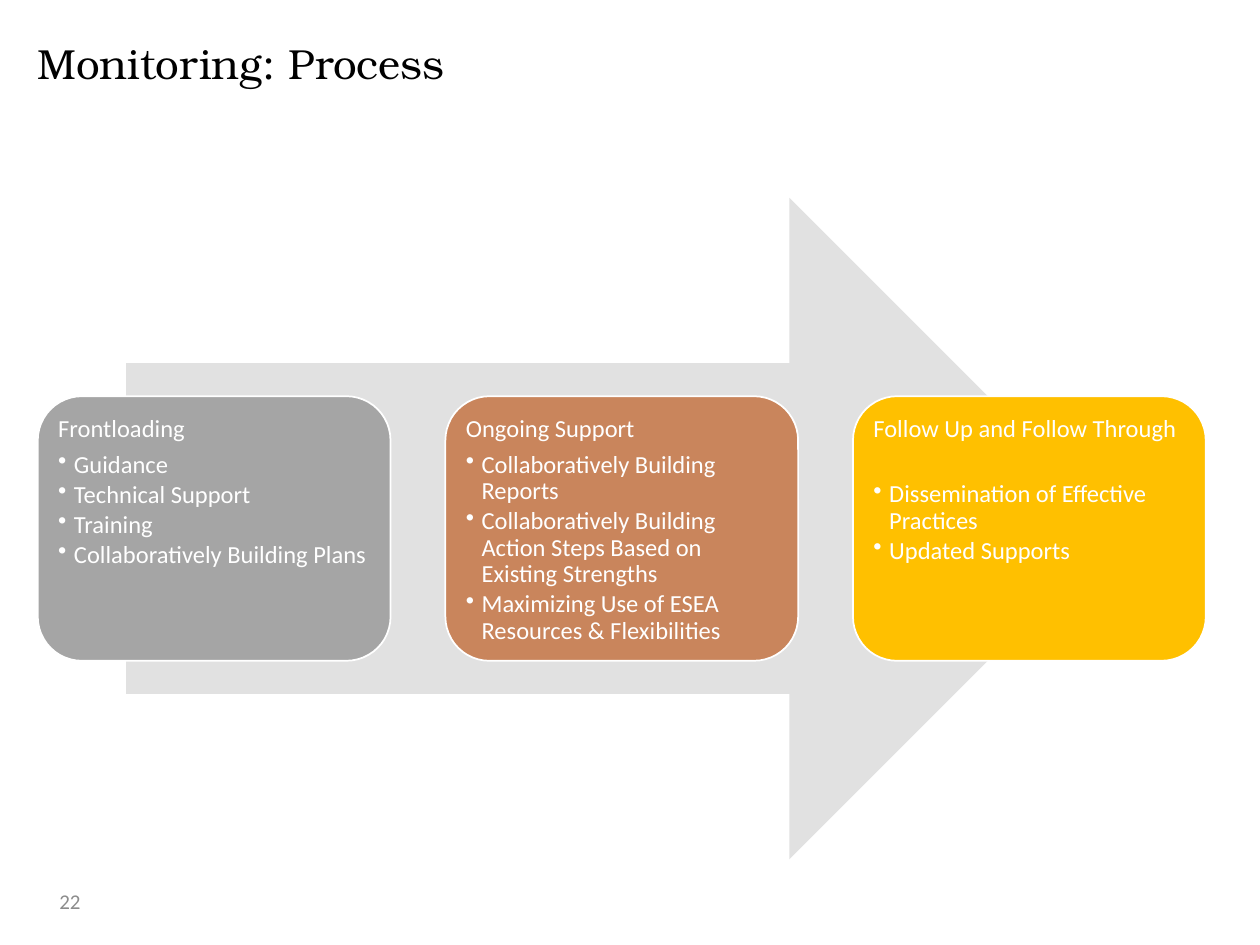
from lxml import etree
from pptx import Presentation
from pptx.dml.color import RGBColor
from pptx.enum.shapes import MSO_SHAPE
from pptx.enum.text import MSO_ANCHOR, PP_ALIGN
from pptx.oxml.ns import qn
from pptx.util import Inches, Pt

ARROW, CARD = MSO_SHAPE.RIGHT_ARROW, MSO_SHAPE.ROUNDED_RECTANGLE
LEFT, CENTER = PP_ALIGN.LEFT, PP_ALIGN.CENTER
TOP, MIDDLE = MSO_ANCHOR.TOP, MSO_ANCHOR.MIDDLE

TITLE = "Monitoring: Process"
PAGE = "22"
STAGES = [
    ("Frontloading", "A5A5A5", 5,
     ["Guidance", "Technical Support", "Training", "Collaboratively Building Plans"]),
    ("Ongoing Support", "C9855C", 5,
     ["Collaboratively Building Reports",
      "Collaboratively Building Action Steps Based on Existing Strengths",
      "Maximizing Use of ESEA Resources & Flexibilities"]),
    ("Follow Up and Follow Through", "FFC000", 22,
     ["Dissemination of Effective Practices", "Updated Supports"]),
]

WIDTH, HEIGHT = 10, 7.5
MARGIN = 0.3
CARD_W, CARD_H, PITCH = 2.8, 2.1, 3.235
ARROW_LEFT, ARROW_TOP, ARROW_W, ARROW_H = 1, 1.57, 7.89, 5.25
CARD_TOP = ARROW_TOP + (ARROW_H - CARD_H) / 2


def rgb(value):
    return RGBColor.from_string(value)


def add_block(kind, left, top, width, height, fill, line=None):
    s = slide.shapes.add_shape(kind, *map(Inches, (left, top, width, height)))
    s.shadow.inherit = False
    s.fill.solid()
    s.fill.fore_color.rgb = rgb(fill)
    if line:
        s.line.color.rgb = rgb(line)
        s.line.width = Pt(1)
    else:
        s.line.fill.background()
    return s


def set_frame(s, inset_x, inset_y, anchor=TOP):
    tf = s.text_frame
    tf.word_wrap = True
    tf.margin_left = tf.margin_right = Inches(inset_x)
    tf.margin_top = tf.margin_bottom = Inches(inset_y)
    tf.vertical_anchor = anchor
    return tf


def write(p, text, size=14, font="Calibri", color="FFFFFF", align=LEFT,
          spacing=1.0, after=0, bullet=False):
    if bullet:
        pPr = p._p.get_or_add_pPr()
        pPr.set("marL", str(Inches(0.125)))
        pPr.set("indent", str(-Inches(0.125)))
        etree.SubElement(pPr, qn("a:buChar"), char="•")
    p.alignment = align
    p.line_spacing = spacing
    p.space_after = Pt(after)
    r = p.add_run()
    r.text = text
    r.font.size = Pt(size)
    r.font.name = font
    r.font.color.rgb = rgb(color)


def add_text(text, left, top, width, height, inset_x=0, inset_y=0, anchor=TOP, **fmt):
    s = slide.shapes.add_textbox(*map(Inches, (left, top, width, height)))
    write(set_frame(s, inset_x, inset_y, anchor).paragraphs[0], text, **fmt)


prs = Presentation()
prs.slide_width, prs.slide_height = Inches(WIDTH), Inches(HEIGHT)
slide = prs.slides.add_slide(prs.slide_layouts[6])

add_text(TITLE, MARGIN, MARGIN, 8.62, 0.78, size=24, font="TeX Gyre Bonum", color="000000")
add_text(PAGE, MARGIN, 6.95, 0.51, 0.4, inset_x=0.1, inset_y=0.05, anchor=MIDDLE,
         size=12, color="8C8C8C", align=CENTER)
add_block(ARROW, ARROW_LEFT, ARROW_TOP, ARROW_W, ARROW_H, "E1E1E1")

for i, (heading, fill, gap, items) in enumerate(STAGES):
    card = add_block(CARD, MARGIN + i * PITCH, CARD_TOP, CARD_W, CARD_H, fill, line="FFFFFF")
    tf = set_frame(card, 0.06, 0.06)
    write(tf.paragraphs[0], heading, spacing=0.9, after=gap)
    for item in items:
        write(tf.add_paragraph(), item, spacing=0.9, after=2.1, bullet=True)

prs.save("out.pptx")
